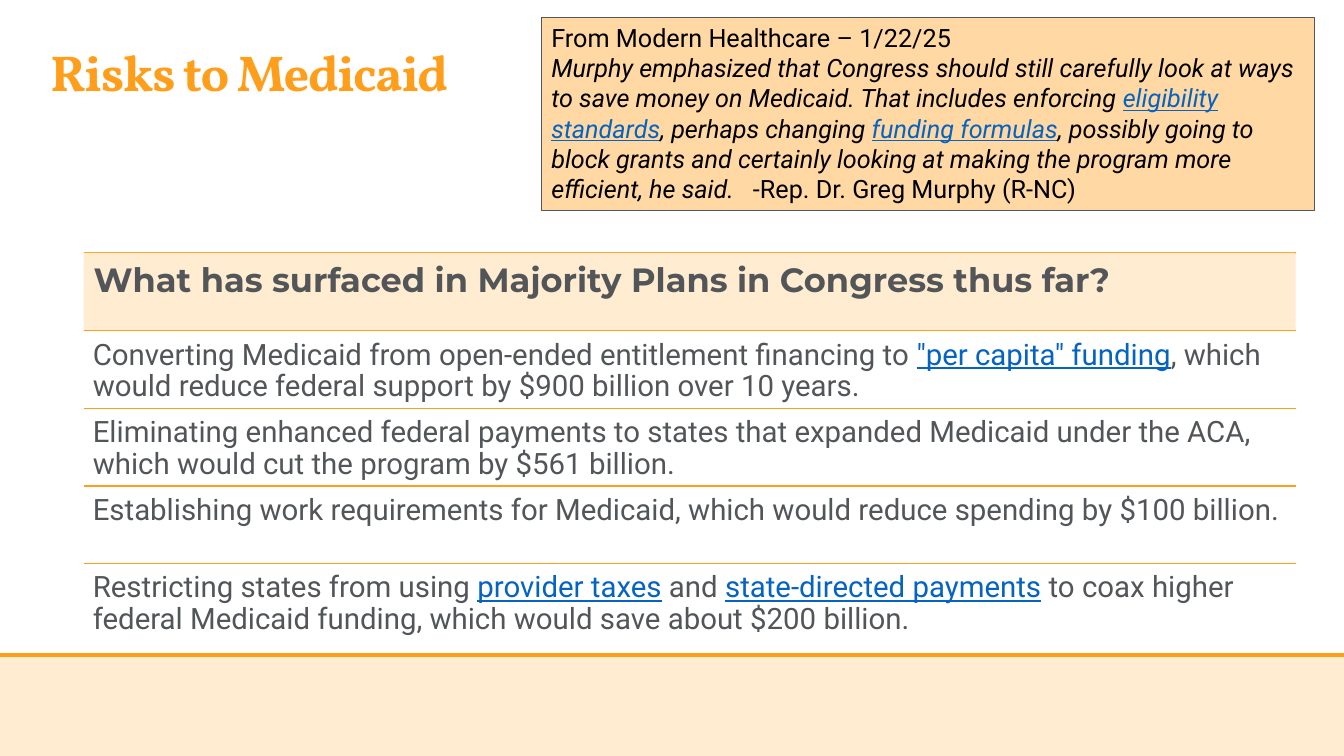
from dataclasses import dataclass

from lxml.etree import SubElement
from pptx import Presentation
from pptx.dml.color import RGBColor
from pptx.enum.shapes import MSO_CONNECTOR as Connector, MSO_SHAPE as Shape
from pptx.enum.text import MSO_ANCHOR as Anchor, MSO_AUTO_SIZE as AutoSize, PP_ALIGN as Align
from pptx.oxml.ns import qn
from pptx.util import Inches, Pt


@dataclass(frozen=True)
class Theme:
    orange: str = "FF9E1B"
    pale: str = "FFECD1"
    quote_fill: str = "FFD8A4"
    white: str = "FFFFFF"
    grey: str = "535659"
    black: str = "000000"
    link: str = "0563C1"
    title_font: str = "Vollkorn"
    heading_font: str = "Montserrat"
    body_font: str = "Roboto"
    title_size: int = 36
    heading_size: int = 24
    plan_size: int = 21
    quote_size: int = 18


THEME = Theme()
SLIDE_WIDTH, SLIDE_HEIGHT = 13.33, 7.5
FOOTER_TOP = 6.5
TABLE_LEFT, TABLE_TOP, TABLE_WIDTH, ROW_HEIGHT = 0.83, 2.51, 12.02, 0.77

HEADING = "What has surfaced in Majority Plans in Congress thus far?"
PLANS = [
    [("Converting Medicaid from open-ended entitlement financing to ", ""),
     ('"per capita" funding', "link"),
     (", which would reduce federal support by $900 billion over 10 years.", "")],
    [("Eliminating enhanced federal payments to states that expanded Medicaid "
      "under the ACA, which would cut the program by $561 billion.", "")],
    [("Establishing work requirements for Medicaid, which would reduce "
      "spending by $100 billion.", "")],
    [("Restricting states from using ", ""),
     ("provider taxes", "link"),
     (" and ", ""),
     ("state-directed payments", "link"),
     (" to coax higher federal Medicaid funding, which would save about "
      "$200 billion.", "")],
]
QUOTE = [
    [("From Modern Healthcare – 1/22/25", "")],
    [("Murphy emphasized that Congress should still carefully look at ways to "
      "save money on Medicaid. That includes enforcing ", "italic"),
     ("eligibility standards", "italic link"),
     (", perhaps changing ", "italic"),
     ("funding formulas", "italic link"),
     (", possibly going to block grants and certainly looking at making the "
      "program more efficient, he said.", "italic"),
     ("\t-Rep. Dr. Greg Murphy (R-NC)", "")],
]


def rgb(color):
    return RGBColor.from_string(color)


def style_run(run, font, size, color, bold=False):
    run.font.name = font
    run.font.size = Pt(size)
    run.font.color.rgb = rgb(color)
    run.font.bold = bold


def write_segments(paragraph, segments, size, color):
    paragraph.alignment = Align.LEFT
    for text, style in segments:
        run = paragraph.add_run()
        run.text = text
        is_link = "link" in style
        style_run(run, THEME.body_font, size, THEME.link if is_link else color)
        run.font.underline = is_link
        run.font.italic = "italic" in style


def add_panel(slide, left, top, width, height, fill, border=None):
    panel = slide.shapes.add_shape(
        Shape.RECTANGLE, Inches(left), Inches(top), Inches(width), Inches(height))
    panel.shadow.inherit = False
    panel.fill.solid()
    panel.fill.fore_color.rgb = rgb(fill)
    if border:
        panel.line.color.rgb = rgb(border)
        panel.line.width = Pt(0.75)
    else:
        panel.line.fill.background()
    return panel


def add_rule(slide, left, top, width, weight):
    rule = slide.shapes.add_connector(
        Connector.STRAIGHT, Inches(left), Inches(top), Inches(left + width), Inches(top))
    rule.line.color.rgb = rgb(THEME.orange)
    rule.line.width = Pt(weight)
    SubElement(rule._element.spPr, qn("a:effectLst"))


def add_row_text(slide, top, inset):
    row = slide.shapes.add_textbox(
        Inches(TABLE_LEFT), Inches(top), Inches(TABLE_WIDTH), Inches(ROW_HEIGHT))
    frame = row.text_frame
    frame.word_wrap = True
    frame.margin_left = frame.margin_right = Inches(inset)
    frame.margin_top = frame.margin_bottom = Inches(inset)
    paragraph = frame.paragraphs[0]
    paragraph.line_spacing = 0.9
    return paragraph


def add_footer(slide):
    add_panel(slide, 0, FOOTER_TOP, SLIDE_WIDTH, SLIDE_HEIGHT - FOOTER_TOP, THEME.pale)
    add_rule(slide, 0, FOOTER_TOP, SLIDE_WIDTH, 3)


def format_title(slide):
    title = slide.shapes.title
    title.left, title.top = Inches(0.4), Inches(0.27)
    title.width, title.height = Inches(4.53), Inches(0.96)
    title.fill.solid()
    title.fill.fore_color.rgb = rgb(THEME.white)
    frame = title.text_frame
    frame.text = "Risks to Medicaid"
    frame.word_wrap = True
    frame.auto_size = AutoSize.NONE
    frame.vertical_anchor = Anchor.MIDDLE
    paragraph = frame.paragraphs[0]
    paragraph.alignment = Align.LEFT
    paragraph.line_spacing = 0.9
    run = paragraph.runs[0]
    style_run(run, THEME.title_font, THEME.title_size, THEME.orange, bold=True)
    run._r.get_or_add_rPr().set("spc", "-90")


def add_plans(slide):
    add_rule(slide, TABLE_LEFT, TABLE_TOP, TABLE_WIDTH, 1)
    add_panel(slide, TABLE_LEFT, TABLE_TOP, TABLE_WIDTH, ROW_HEIGHT, THEME.pale)
    heading = add_row_text(slide, TABLE_TOP, 0.1)
    heading.text = HEADING
    style_run(heading.runs[0], THEME.heading_font, THEME.heading_size, THEME.grey, bold=True)
    for row, plan in enumerate(PLANS, start=1):
        top = TABLE_TOP + row * ROW_HEIGHT
        add_rule(slide, TABLE_LEFT, top, TABLE_WIDTH, 1)
        write_segments(add_row_text(slide, top, 0.09), plan, THEME.plan_size, THEME.grey)


def add_quote(slide):
    quote = add_panel(slide, 5.37, 0.17, 7.67, 1.92, THEME.quote_fill, THEME.grey)
    frame = quote.text_frame
    frame.word_wrap = True
    frame.auto_size = AutoSize.SHAPE_TO_FIT_TEXT
    frame.vertical_anchor = Anchor.TOP
    for index, segments in enumerate(QUOTE):
        paragraph = frame.add_paragraph() if index else frame.paragraphs[0]
        write_segments(paragraph, segments, THEME.quote_size, THEME.black)


def main():
    deck = Presentation()
    deck.slide_width, deck.slide_height = Inches(SLIDE_WIDTH), Inches(SLIDE_HEIGHT)
    slide = deck.slides.add_slide(deck.slide_layouts[5])
    add_footer(slide)
    format_title(slide)
    add_plans(slide)
    add_quote(slide)
    deck.save("out.pptx")


if __name__ == "__main__":
    main()
